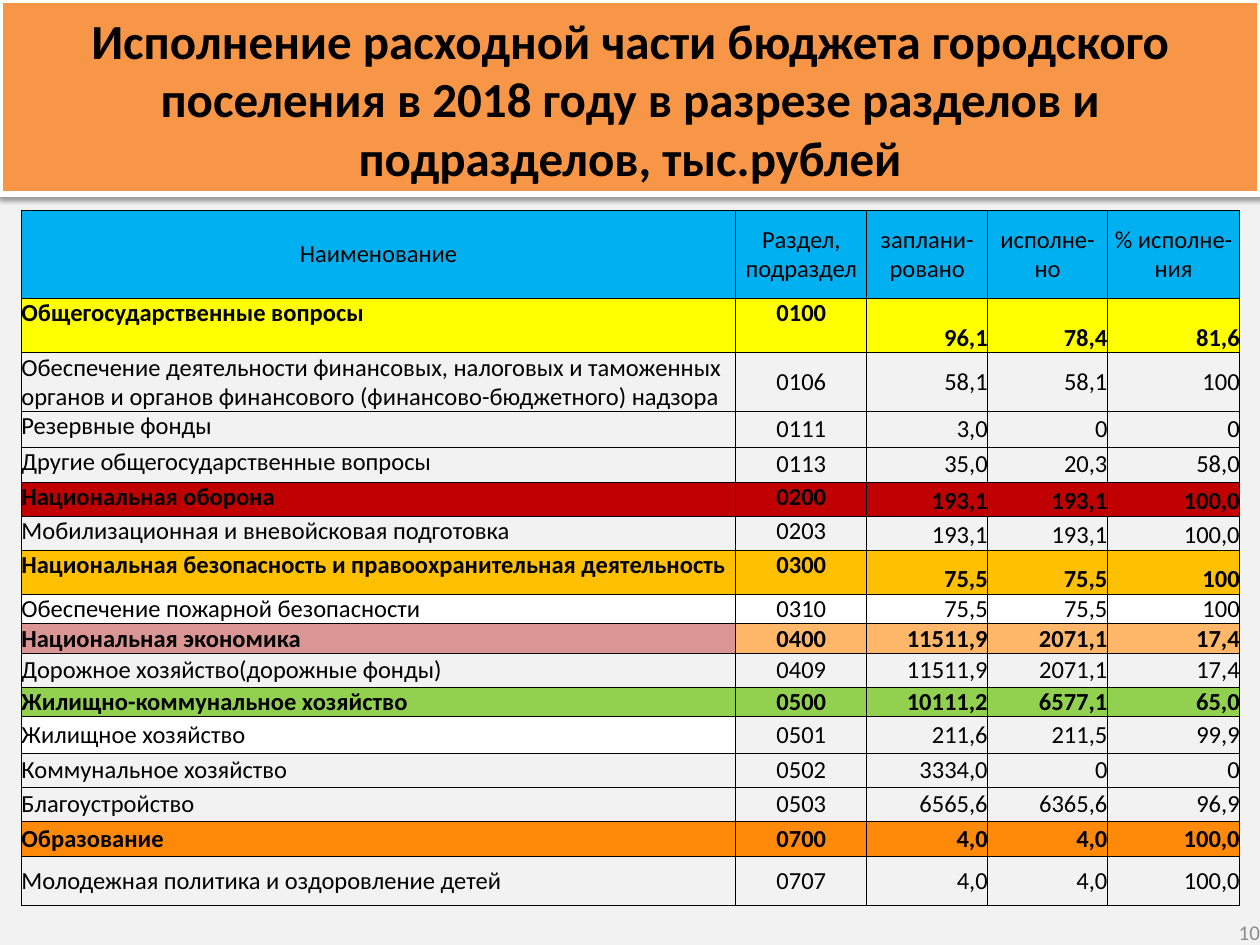
from lxml import etree
from pptx import Presentation
from pptx.dml.color import RGBColor
from pptx.enum.text import MSO_ANCHOR as Anchor, MSO_AUTO_SIZE as AutoSize, PP_ALIGN as Align
from pptx.oxml import parse_xml
from pptx.oxml.ns import nsdecls, qn
from pptx.util import Inches, Pt

FONT = "Calibri"
COLORS = {
    "background": "F2F2F2", "white": "FFFFFF", "black": "000000",
    "title": "F79646", "header": "00B0F0", "number": "8C8C8C",
    "general": "FFFF00", "defence": "C00000", "safety": "FFC000",
    "economy": "FFB869", "economy name": "D99694",
    "housing": "92D050", "education": "FF8A09",
}
TITLE = ("Исполнение расходной части бюджета городского поселения "
         "в 2018 году в разрезе разделов и подразделов, тыс.рублей")

COLUMN_WIDTHS = [5.67, 1.04, 0.96, 0.95, 1.05]
COLUMN_ALIGNS = [Align.LEFT, Align.CENTER, Align.RIGHT, Align.RIGHT, Align.RIGHT]
ANCHORS = {"t": Anchor.TOP, "m": Anchor.MIDDLE, "b": Anchor.BOTTOM}
HEADER = ["Наименование", "Раздел, подраздел", "заплани-ровано",
          "исполне-\vно", "% исполне-ния"]
HEADER_HEIGHT = 0.7

# Height, fill of the name, fill of the other cells, anchors by column, texts
ROWS = [
    (0.43, "general", "general", "ttbbb",
     ["Общегосударственные вопросы", "0100", "96,1", "78,4", "81,6"]),
    (0.46, None, None, "tmmmm",
     ["Обеспечение деятельности финансовых, налоговых и таможенных органов и органов "
      "финансового (финансово-бюджетного) надзора", "0106", "58,1", "58,1", "100"]),
    (0.28, None, None, "tmmmm", ["Резервные фонды", "0111", "3,0", "0", "0"]),
    (0.28, None, None, "tmmmm",
     ["Другие общегосударственные вопросы", "0113", "35,0", "20,3", "58,0"]),
    (0.27, "defence", "defence", "ttbbb",
     ["Национальная оборона", "0200", "193,1", "193,1", "100,0"]),
    (0.27, None, None, "ttbbb",
     ["Мобилизационная и вневойсковая подготовка", "0203", "193,1", "193,1", "100,0"]),
    (0.35, "safety", "safety", "ttbbb",
     ["Национальная безопасность и правоохранительная деятельность",
      "0300", "75,5", "75,5", "100"]),
    (0.23, "white", "white", "ttmbb",
     ["Обеспечение пожарной безопасности", "0310", "75,5", "75,5", "100"]),
    (0.23, "economy name", "economy", "mmmmm",
     ["Национальная экономика", "0400", "11511,9", "2071,1", "17,4"]),
    (0.27, None, None, "mmmmm",
     ["Дорожное хозяйство(дорожные фонды)", "0409", "11511,9", "2071,1", "17,4"]),
    (0.23, "housing", "housing", "mmmmm",
     ["Жилищно-коммунальное хозяйство", "0500", "10111,2", "6577,1", "65,0"]),
    (0.29, "white", None, "mmmmm",
     ["Жилищное хозяйство", "0501", "211,6", "211,5", "99,9"]),
    (0.27, None, None, "mmmmm", ["Коммунальное хозяйство", "0502", "3334,0", "0", "0"]),
    (0.27, None, None, "mmmmm", ["Благоустройство", "0503", "6565,6", "6365,6", "96,9"]),
    (0.28, "education", "education", "mmmmm",
     ["Образование", "0700", "4,0", "4,0", "100,0"]),
    (0.39, None, None, "mmmmm",
     ["Молодежная политика и оздоровление детей", "0707", "4,0", "4,0", "100,0"]),
]


def color(name):
    return RGBColor.from_string(COLORS[name])


def format_text(text_frame, size, color_name, align, bold=False):
    for paragraph in text_frame.paragraphs:
        paragraph.alignment = align
        for run in paragraph.runs:
            run.font.name = FONT
            run.font.size = Pt(size)
            run.font.bold = bold
            run.font.color.rgb = color(color_name)


def set_margins(box, left, top, right, bottom):
    box.margin_left, box.margin_top = Inches(left), Inches(top)
    box.margin_right, box.margin_bottom = Inches(right), Inches(bottom)


def place_title(slide, left, top, width, height):
    title = slide.shapes.title
    title.left, title.top = Inches(left), Inches(top)
    title.width, title.height = Inches(width), Inches(height)
    title.fill.solid()
    title.fill.fore_color.rgb = color("title")
    title.line.color.rgb = color("white")
    title.line.width = Pt(3)

    # Soft shadow straight below the band
    title._element.spPr.append(parse_xml(
        f'<a:effectLst {nsdecls("a")}><a:outerShdw blurRad="{Pt(3.1)}" dist="{Pt(1.6)}" '
        f'dir="5400000" rotWithShape="0"><a:srgbClr val="{COLORS["black"]}">'
        '<a:alpha val="38000"/></a:srgbClr></a:outerShdw></a:effectLst>'))

    text_frame = title.text_frame
    text_frame.text = TITLE
    text_frame.word_wrap = True
    text_frame.auto_size = AutoSize.SHAPE_TO_FIT_TEXT
    text_frame.vertical_anchor = Anchor.TOP
    set_margins(text_frame, 0.1, 0.08, 0.1, 0.05)
    format_text(text_frame, 28, "black", Align.CENTER, bold=True)


def add_borders(cell):
    properties = cell._tc.get_or_add_tcPr()
    for side in ("a:lnL", "a:lnR", "a:lnT", "a:lnB"):
        border = etree.SubElement(properties, qn(side), w=str(Pt(0.5)))
        fill = etree.SubElement(border, qn("a:solidFill"))
        etree.SubElement(fill, qn("a:srgbClr"), val=COLORS["black"])


def fill_cell(cell, text, fill_name, align, anchor, bold):
    add_borders(cell)
    if fill_name:
        cell.fill.solid()
        cell.fill.fore_color.rgb = color(fill_name)
    else:
        cell.fill.background()
    set_margins(cell, 0, 0, 0, 0)
    cell.vertical_anchor = anchor
    cell.text_frame.text = text
    format_text(cell.text_frame, 14, "black", align, bold)


def place_budget_table(slide, left, top, width, height):
    table = slide.shapes.add_table(
        len(ROWS) + 1, len(HEADER),
        Inches(left), Inches(top), Inches(width), Inches(height)).table
    table.first_row = table.horz_banding = False
    for column, column_width in zip(table.columns, COLUMN_WIDTHS):
        column.width = Inches(column_width)

    # Header
    table.rows[0].height = Inches(HEADER_HEIGHT)
    for cell, text in zip(table.rows[0].cells, HEADER):
        fill_cell(cell, text, "header", Align.CENTER, Anchor.MIDDLE, False)

    # Sections (codes ending in 00) are bold, subsections regular
    for index, (row_height, name_fill, other_fill, anchors, texts) in enumerate(ROWS, 1):
        row = table.rows[index]
        row.height = Inches(row_height)
        fills = [name_fill] + [other_fill] * (len(texts) - 1)
        is_section = texts[1].endswith("00")
        for cell, text, fill, align, anchor in zip(
                row.cells, texts, fills, COLUMN_ALIGNS, anchors):
            fill_cell(cell, text, fill, align, ANCHORS[anchor], is_section)


def place_page_number(slide, left, top, width, height):
    text_frame = slide.shapes.add_textbox(
        Inches(left), Inches(top), Inches(width), Inches(height)).text_frame
    text_frame.text = "10"
    text_frame.word_wrap = True
    text_frame.vertical_anchor = Anchor.MIDDLE
    set_margins(text_frame, 0, 0, 0, 0)
    format_text(text_frame, 12, "number", Align.RIGHT)


def main():
    presentation = Presentation()
    presentation.slide_width, presentation.slide_height = Inches(10), Inches(7.5)
    slide = presentation.slides.add_slide(presentation.slide_layouts[5])
    slide.background.fill.solid()
    slide.background.fill.fore_color.rgb = color("background")
    place_title(slide, 0, 0, 10, 1.54)
    place_budget_table(slide, 0.17, 1.67, 9.66, 5.54)
    place_page_number(slide, 7.67, 7.29, 2.33, 0.21)
    presentation.save("out.pptx")


if __name__ == "__main__":
    main()
